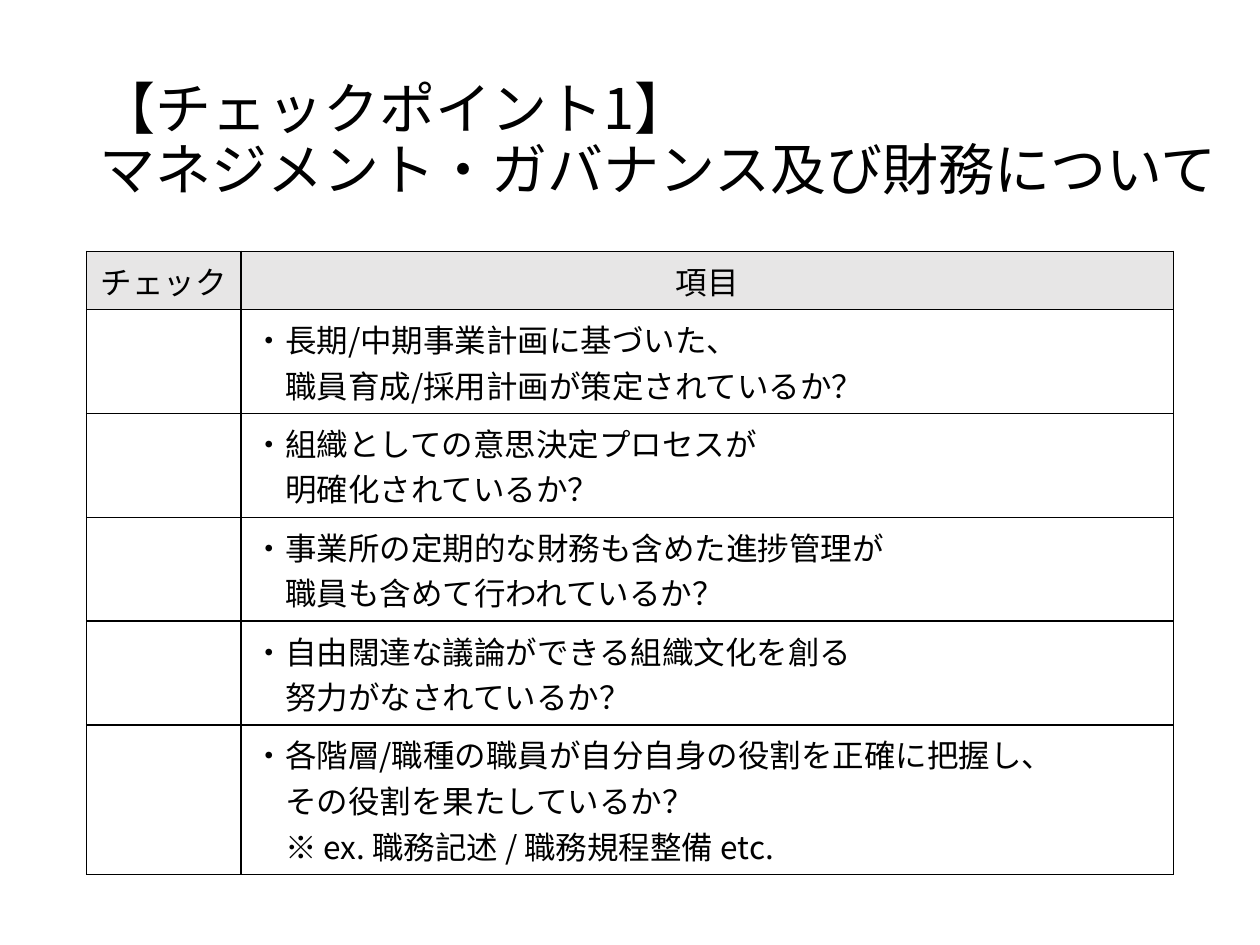
from dataclasses import dataclass

from lxml.etree import SubElement
from pptx import Presentation
from pptx.dml.color import RGBColor
from pptx.enum.text import MSO_ANCHOR as Anchor, MSO_AUTO_SIZE as AutoSize, PP_ALIGN as Align
from pptx.oxml.ns import qn
from pptx.util import Pt

FONT = "Noto Sans CJK JP"
BLACK, WHITE, GRAY = "000000", "FFFFFF", "E7E6E6"
TITLE = "【チェックポイント1】\vマネジメント・ガバナンス及び財務について"


@dataclass
class CheckRow:
    check: str
    item: str
    fill: str = WHITE
    align: Align = Align.LEFT


ROWS = [
    CheckRow("チェック", "項目", GRAY, Align.CENTER),
    CheckRow("", "・長期/中期事業計画に基づいた、\n　職員育成/採用計画が策定されているか？"),
    CheckRow("", "・組織としての意思決定プロセスが\n　明確化されているか？"),
    CheckRow("", "・事業所の定期的な財務も含めた進捗管理が\n　職員も含めて行われているか？"),
    CheckRow("", "・自由闊達な議論ができる組織文化を創る\n　努力がなされているか？"),
    CheckRow("", "・各階層/職種の職員が自分自身の役割を正確に把握し、\n"
                 "　その役割を果たしているか？\n"
                 "　※ ex. 職務記述 / 職務規程整備 etc."),
]


def color(value: str) -> RGBColor:
    return RGBColor.from_string(value)


def format_text(frame, size: float, align: Align) -> None:
    for para in frame.paragraphs:
        para.alignment = align
        for span in para.runs:
            span.font.name = FONT
            span.font.size = Pt(size)
            span.font.bold = False
            span.font.color.rgb = color(BLACK)
            SubElement(span.font._element, qn("a:ea"), typeface=FONT)


def add_borders(cell) -> None:
    properties = cell._tc.get_or_add_tcPr()
    for position, side in enumerate(("lnL", "lnR", "lnT", "lnB")):
        line = SubElement(properties, qn(f"a:{side}"), w=str(Pt(1)))
        fill = SubElement(line, qn("a:solidFill"))
        SubElement(fill, qn("a:srgbClr"), val=BLACK)
        properties.insert(position, line)


def fill_cell(cell, text: str, row: CheckRow) -> None:
    cell.text_frame.text = text
    format_text(cell.text_frame, 18, row.align)
    cell.fill.solid()
    cell.fill.fore_color.rgb = color(row.fill)
    add_borders(cell)


def add_title(page) -> None:
    box = page.shapes.title
    box.left, box.top, box.width, box.height = Pt(49.5), Pt(28.75), Pt(656), Pt(104.4)
    frame = box.text_frame
    frame.text = TITLE
    frame.word_wrap = True
    frame.auto_size = AutoSize.NONE
    frame.vertical_anchor = Anchor.MIDDLE
    format_text(frame, 32, Align.LEFT)
    frame.paragraphs[0].line_spacing = 0.9


def add_checklist(page) -> None:
    height = Pt(303)
    holder = page.shapes.add_table(len(ROWS), 2, Pt(49.5), Pt(143.7), Pt(621), height)
    table = holder.table
    table.first_row = table.horz_banding = False
    for column, width in zip(table.columns, (88.2, 532.8)):
        column.width = Pt(width)
    for line, row in zip(table.rows, ROWS):
        line.height = Pt(29.2)
        for cell, text in zip(line.cells, (row.check, row.item)):
            fill_cell(cell, text, row)
    holder.height = height


def main() -> None:
    deck = Presentation()
    deck.slide_width, deck.slide_height = Pt(720), Pt(540)
    page = deck.slides.add_slide(deck.slide_layouts[5])
    add_title(page)
    add_checklist(page)
    deck.save("out.pptx")


if __name__ == "__main__":
    main()
